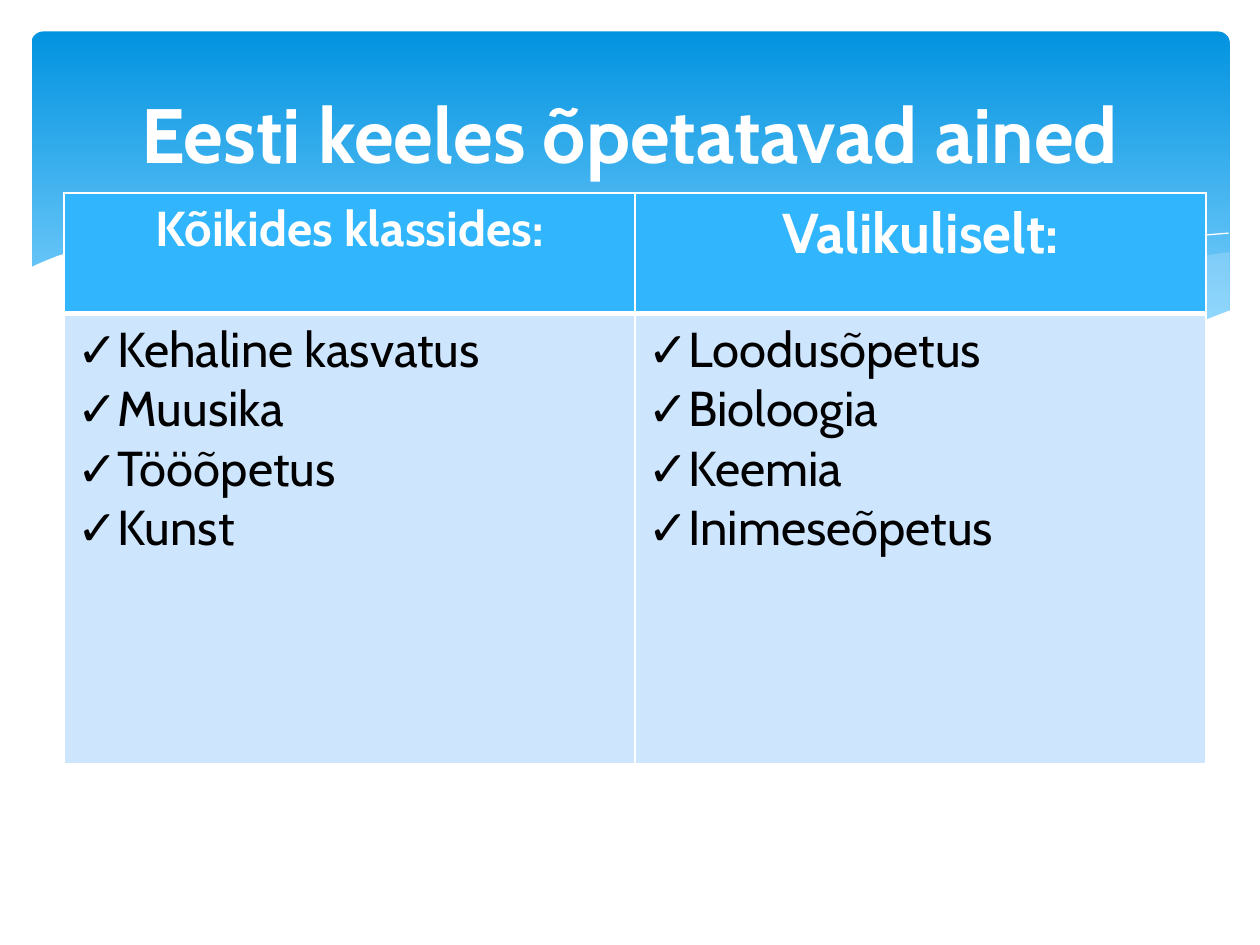
from lxml import etree
from pptx import Presentation
from pptx.dml.color import RGBColor
from pptx.enum.shapes import MSO_SHAPE
from pptx.enum.text import MSO_ANCHOR, PP_ALIGN
from pptx.oxml.ns import qn
from pptx.util import Inches, Pt

ROUNDED = MSO_SHAPE.ROUNDED_RECTANGLE
MIDDLE = MSO_ANCHOR.MIDDLE
CENTER, LEFT = PP_ALIGN.CENTER, PP_ALIGN.LEFT

FONT = "Cabin"
WHITE = RGBColor(0xFF, 0xFF, 0xFF)
BLACK = RGBColor(0, 0, 0)
BANNER_TOP = RGBColor(0x02, 0x93, 0xE0)
BANNER_BOTTOM = RGBColor(0x83, 0xD3, 0xFE)
WAVE_BLUE = RGBColor(0xC6, 0xE7, 0xFC)
HEADER_BLUE = RGBColor(0x31, 0xB6, 0xFD)
BODY_BLUE = RGBColor(0xCE, 0xE5, 0xFE)

# Wave outlines as (x, y) in inches on the slide
RIGHT_WAVE = [
    (9.76, 2), (9.48, 2.04), (9.21, 2.1), (8.91, 2.16), (8.61, 2.23), (8.05, 2.37),
    (7.53, 2.48), (7.06, 2.57), (6.61, 2.65), (6.91, 2.69), (7.19, 2.72), (7.45, 2.75),
    (7.69, 2.77), (8.03, 2.78), (8.35, 2.77), (8.63, 2.75), (8.89, 2.72), (9.13, 2.67),
    (9.35, 2.62), (9.49, 2.57), (9.63, 2.52), (9.76, 2.47)]
MIDDLE_WAVE = [
    (8.93, 2.73), (8.66, 2.69), (8.37, 2.65), (8.07, 2.6), (7.75, 2.54), (7.41, 2.47),
    (7.06, 2.4), (6.68, 2.31), (6.29, 2.22), (5.98, 2.14), (5.69, 2.08), (5.41, 2.03),
    (5.14, 1.98), (4.89, 1.94), (4.65, 1.91), (4.42, 1.89), (4.2, 1.87), (3.99, 1.86),
    (3.8, 1.85), (3.61, 1.85), (3.44, 1.86), (3.13, 1.88), (2.86, 1.91), (3.23, 1.96),
    (3.62, 2.03), (4.04, 2.11), (4.49, 2.22), (4.91, 2.32), (5.3, 2.4), (5.66, 2.48),
    (6.01, 2.55), (6.34, 2.61), (6.65, 2.66), (6.95, 2.7), (7.22, 2.74), (7.48, 2.76),
    (7.73, 2.77), (7.96, 2.78), (8.28, 2.78), (8.57, 2.77), (8.76, 2.75)]
LONG_CREST = [
    (3.09, 1.95), (3.18, 1.94), (3.35, 1.91), (3.53, 1.89), (3.74, 1.88), (4.01, 1.87),
    (4.33, 1.87), (4.69, 1.89), (5.1, 1.92), (5.56, 1.97), (6.08, 2.04), (6.65, 2.13),
    (7.27, 2.26), (7.95, 2.41), (8.69, 2.61), (9.07, 2.72)]
SHORT_CREST = [
    (6.13, 2.57), (6.53, 2.46), (6.95, 2.35), (7.48, 2.23), (8.06, 2.1), (8.66, 1.99),
    (8.95, 1.94), (9.24, 1.9), (9.51, 1.87), (9.75, 1.85)]
WHITE_WAVE = [
    (9.77, 2.46), (9.59, 2.53), (9.4, 2.59), (9.2, 2.65), (8.99, 2.69), (8.75, 2.73),
    (8.5, 2.75), (8.23, 2.77), (7.93, 2.76), (7.61, 2.75), (7.26, 2.72), (6.88, 2.68),
    (6.48, 2.62), (6.03, 2.54), (5.55, 2.45), (5.03, 2.33), (4.47, 2.2), (4.18, 2.13),
    (3.91, 2.07), (3.65, 2.02), (3.4, 1.97), (3.16, 1.94), (2.92, 1.9), (2.71, 1.88),
    (2.5, 1.86), (2.3, 1.85), (2.11, 1.84), (1.77, 1.84), (1.46, 1.85), (1.19, 1.87),
    (0.95, 1.91), (0.76, 1.95), (0.59, 1.99), (0.46, 2.03), (0.36, 2.07), (0.29, 2.1),
    (0.23, 2.13), (0.23, 3.29), (9.77, 3.29)]

COLUMNS = [
    ("Kõikides klassides:", 28, ["Kehaline kasvatus", "Muusika", "Tööõpetus", "Kunst"]),
    ("Valikuliselt:", 32, ["Loodusõpetus", "Bioloogia", "Keemia", "Inimeseõpetus"]),
]


def write_text(para, text, size=28, color=BLACK, bold=False, align=LEFT):
    para.alignment = align
    span = para.add_run()
    span.text = text
    font = span.font
    font.name, font.size, font.bold = FONT, Pt(size), bold
    font.color.rgb = color


def add_check_bullet(para, indent=Inches(0.31)):
    props = para._p.get_or_add_pPr()
    props.set("marL", str(indent))
    props.set("indent", str(-indent))
    etree.SubElement(props, qn("a:buFont")).set("typeface", FONT)
    etree.SubElement(props, qn("a:buChar")).set("char", "✓")


def add_wave(page, points, fill=None, opacity=100):
    """Draw a filled outline, or an open white hairline when fill is None."""
    corners = [(Inches(x), Inches(y)) for x, y in points]
    builder = page.shapes.build_freeform(*corners[0])
    builder.add_line_segments(corners[1:], close=fill is not None)
    wave = builder.convert_to_shape()
    wave.shadow.inherit = False
    if fill is None:
        wave.fill.background()
        wave.line.color.rgb = WHITE
        wave.line.width = 0
        return
    wave.fill.solid()
    wave.fill.fore_color.rgb = fill
    wave.line.fill.background()
    if opacity < 100:
        color = wave._element.spPr.find(qn("a:solidFill"))[0]
        etree.SubElement(color, qn("a:alpha")).set("val", str(opacity * 1000))


def add_banner(page, left, top, width, height):
    banner = page.shapes.add_shape(ROUNDED, left, top, width, height)
    banner.adjustments[0] = 0.034
    banner.shadow.inherit = False
    banner.line.fill.background()
    banner.fill.gradient()
    banner.fill.gradient_angle = 270
    stops = zip(banner.fill.gradient_stops, [(0, BANNER_TOP), (0.9, BANNER_BOTTOM)])
    for stop, (position, color) in stops:
        stop.position = position
        stop.color.rgb = color
    add_wave(page, RIGHT_WAVE, WAVE_BLUE, opacity=29)
    add_wave(page, MIDDLE_WAVE, WAVE_BLUE, opacity=40)
    add_wave(page, LONG_CREST)
    add_wave(page, SHORT_CREST)
    add_wave(page, WHITE_WAVE, WHITE)


def add_title(page, left, top, width, height):
    box = page.shapes.add_textbox(left, top, width, height)
    frame = box.text_frame
    frame.word_wrap = True
    frame.vertical_anchor = MIDDLE
    write_text(frame.paragraphs[0], "Eesti keeles õpetatavad ained",
               size=44, color=WHITE, bold=True, align=CENTER)


def style_cell(cell, fill, top=1, bottom=1):
    """Fill a cell and give it white borders, with widths in points."""
    cell.fill.solid()
    cell.fill.fore_color.rgb = fill
    props = cell._tc.get_or_add_tcPr()
    borders = [("a:lnL", 1), ("a:lnR", 1), ("a:lnT", top), ("a:lnB", bottom)]
    for place, (tag, points) in enumerate(borders):
        border = etree.Element(qn(tag), w=str(Pt(points)))
        solid = etree.SubElement(border, qn("a:solidFill"))
        etree.SubElement(solid, qn("a:srgbClr")).set("val", str(WHITE))
        props.insert(place, border)


def add_subject_table(page, left, top, width, height):
    header_height = Inches(0.96)
    table = page.shapes.add_table(2, len(COLUMNS), left, top, width, height).table
    table.rows[0].height = header_height
    table.rows[1].height = height - header_height
    for index, (heading, size, subjects) in enumerate(COLUMNS):
        header, body = table.cell(0, index), table.cell(1, index)
        style_cell(header, HEADER_BLUE, bottom=3)
        style_cell(body, BODY_BLUE, top=3)
        write_text(header.text_frame.paragraphs[0], heading,
                   size=size, color=WHITE, bold=True, align=CENTER)
        frame = body.text_frame
        for number, subject in enumerate(subjects):
            para = frame.add_paragraph() if number else frame.paragraphs[0]
            write_text(para, subject)
            add_check_bullet(para)


def main():
    deck = Presentation()
    deck.slide_width, deck.slide_height = Inches(10), Inches(7.5)
    page = deck.slides.add_slide(deck.slide_layouts[6])
    add_banner(page, Inches(0.25), Inches(0.25), Inches(9.51), Inches(2.7))
    add_title(page, Inches(0.5), Inches(0.37), Inches(9), Inches(1.37))
    add_subject_table(page, Inches(0.51), Inches(1.53), Inches(9.06), Inches(4.53))
    deck.save("out.pptx")


if __name__ == "__main__":
    main()
